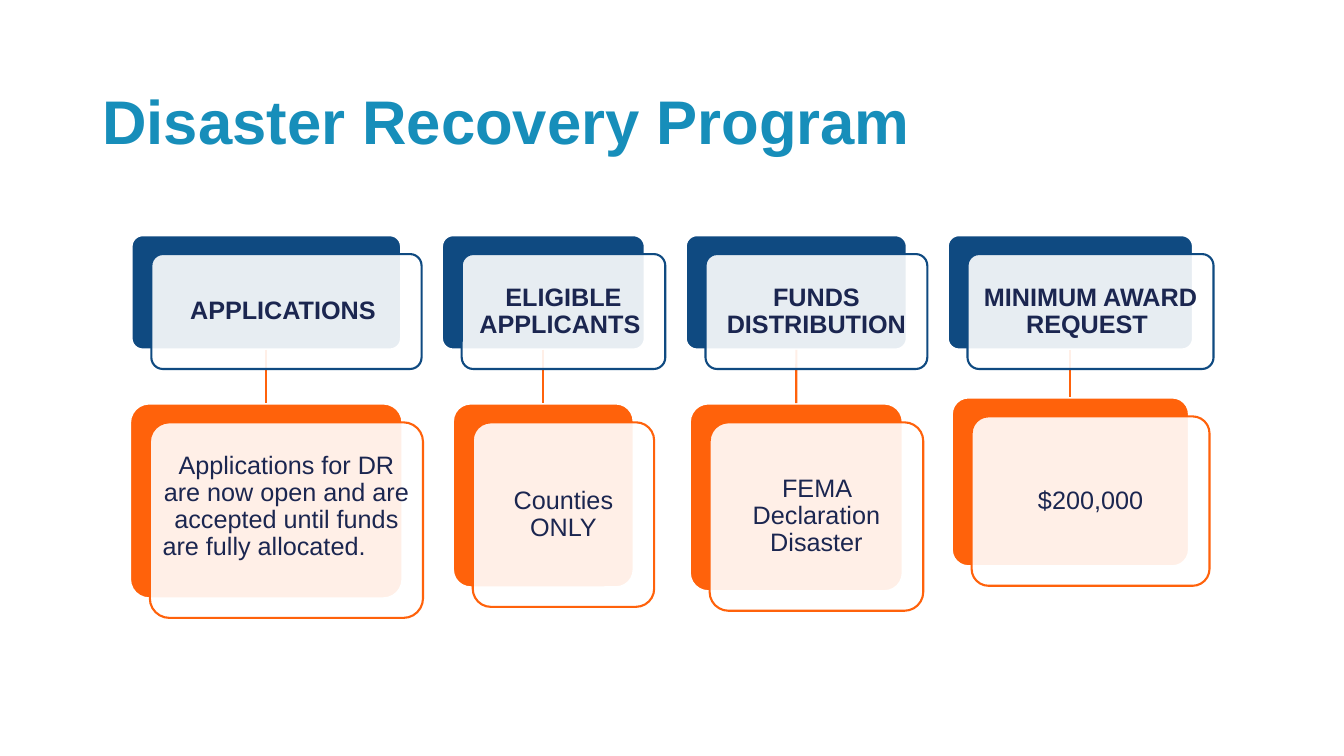
from lxml.etree import SubElement
from pptx import Presentation
from pptx.dml.color import RGBColor
from pptx.enum.shapes import MSO_CONNECTOR, MSO_SHAPE
from pptx.enum.text import MSO_ANCHOR, PP_ALIGN
from pptx.oxml.ns import qn
from pptx.util import Pt

COLORS = {"title": "178EBA", "heading": "0F4A81", "detail": "FF620B",
          "text": "1B2650", "white": "FFFFFF"}
HEADING_TOP, HEADING_HEIGHT = 167.8, 82.1
SHIFT_X, SHIFT_Y = 14.4, 13.7

# centre, heading, heading width, detail paragraphs, detail top, width, height
COLUMNS = [
    (190.2, "APPLICATIONS ", 193,
     ["Applications for DR are now open and are accepted until funds",
      "are fully allocated."], 288, 195.1, 139.7),
    (388.1, "ELIGIBLE APPLICANTS ", 145.4, ["Counties ONLY"], 288, 129.6, 131.8),
    (568.8, "FUNDS DISTRIBUTION", 158.4,
     ["FEMA Declaration Disaster"], 288, 152.6, 134.6),
    (764.6, "MINIMUM AWARD REQUEST ", 175.7, ["$200,000"], 283.7, 169.9, 121),
]


def add_card(left, top, width, height, fill, line, line_width):
    card = page.shapes.add_shape(MSO_SHAPE.ROUNDED_RECTANGLE,
                                 Pt(left), Pt(top), Pt(width), Pt(height))
    card.adjustments[0] = 0.1
    card.shadow.inherit = False
    card.fill.solid()
    card.fill.fore_color.rgb = RGBColor.from_string(COLORS[fill])
    card.line.color.rgb = RGBColor.from_string(COLORS[line])
    card.line.width = Pt(line_width)
    return card


def write(box, texts, size, bold, color, align):
    box.text_frame.word_wrap = True
    box.text_frame.text = "\n".join(texts)
    for para in box.text_frame.paragraphs:
        para.alignment = align
        para.line_spacing = 0.9
        for span in para.runs:
            for name, value in {"name": "Arial", "size": Pt(size), "bold": bold}.items():
                setattr(span.font, name, value)
            span.font.color.rgb = RGBColor.from_string(COLORS[color])


deck = Presentation()
deck.slide_width, deck.slide_height = Pt(960), Pt(540)
page = deck.slides.add_slide(deck.slide_layouts[6])

title = page.shapes.add_textbox(Pt(66), Pt(11.5), Pt(828), Pt(104.4))
title.text_frame.vertical_anchor = MSO_ANCHOR.BOTTOM
write(title, ["Disaster Recovery Program"], 44, True, "title", PP_ALIGN.LEFT)

for center, heading, heading_width, details, top, width, height in COLUMNS:
    cards = [
        ("heading", [heading], HEADING_TOP, heading_width, HEADING_HEIGHT),
        ("detail", details, top, width, height),
    ]
    backs = [add_card(center - w / 2, y, w, h, kind, "white", 2)
             for kind, texts, y, w, h in cards]

    link = page.shapes.add_connector(MSO_CONNECTOR.STRAIGHT, 0, 0, 0, 0)
    link.begin_connect(backs[0], 2)
    link.end_connect(backs[1], 0)
    link.line.color.rgb = RGBColor.from_string(COLORS["detail"])
    link.line.width = Pt(1.5)
    SubElement(link.element.spPr, qn("a:effectLst"))

    for kind, texts, y, w, h in cards:
        front = add_card(center - w / 2 + SHIFT_X, y + SHIFT_Y, w, h, "white", kind, 1.5)
        fill_color = front.element.spPr.find(qn("a:solidFill")).find(qn("a:srgbClr"))
        SubElement(fill_color, qn("a:alpha"), val="90000")
        frame = front.text_frame
        frame.vertical_anchor = MSO_ANCHOR.MIDDLE
        for side in ("left", "top", "right", "bottom"):
            setattr(frame, f"margin_{side}", Pt(5))
        write(front, texts, 18, kind == "heading", "text", PP_ALIGN.CENTER)
        if len(texts) > 1:
            frame.paragraphs[-1].alignment = PP_ALIGN.LEFT
            frame.margin_bottom = Pt(24)

deck.save("out.pptx")
